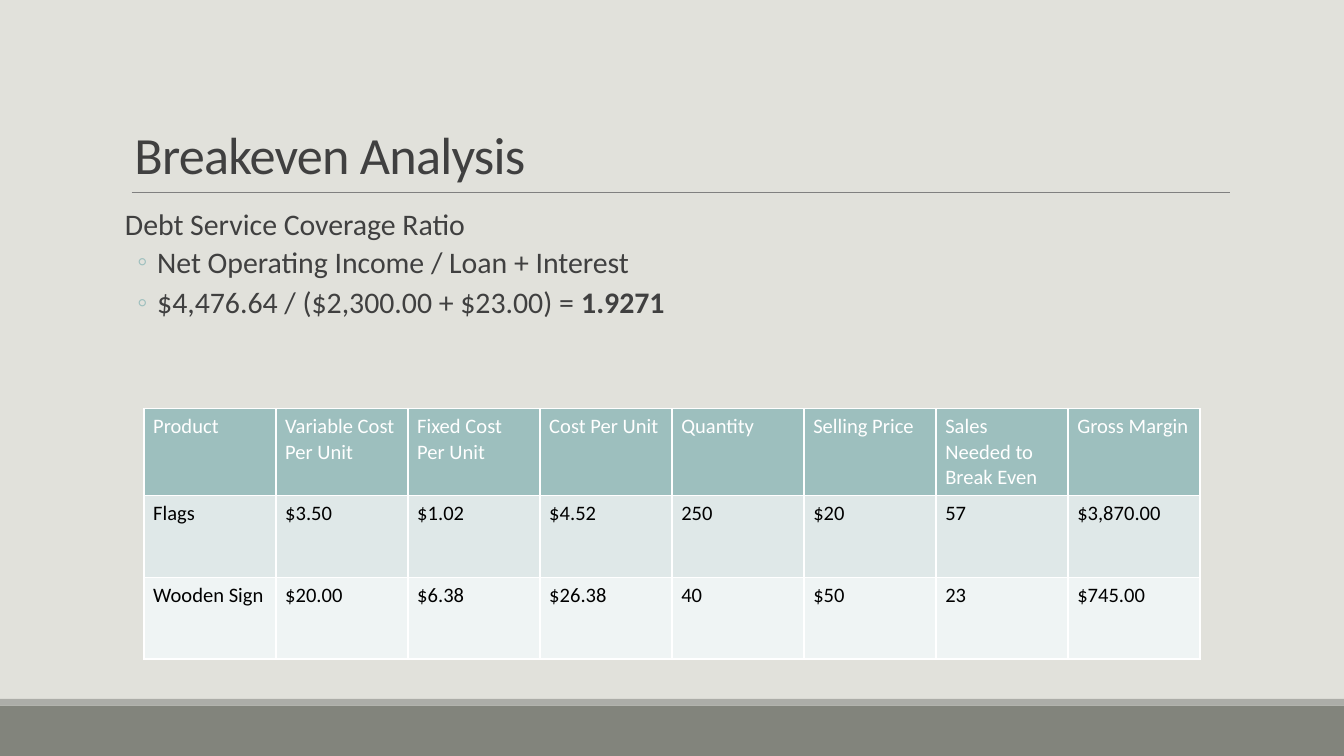
from lxml import etree
from pptx import Presentation
from pptx.dml.color import RGBColor
from pptx.enum.shapes import MSO_CONNECTOR, MSO_SHAPE
from pptx.enum.text import MSO_ANCHOR, MSO_AUTO_SIZE, PP_ALIGN
from pptx.oxml.ns import qn
from pptx.util import Inches, Pt

RECTANGLE = MSO_SHAPE.RECTANGLE
STRAIGHT = MSO_CONNECTOR.STRAIGHT
LEFT = PP_ALIGN.LEFT
TOP, BOTTOM = MSO_ANCHOR.TOP, MSO_ANCHOR.BOTTOM
NO_AUTOFIT = MSO_AUTO_SIZE.NONE

FONT = "Calibri"
COLORS = {
    "background": "E1E1DB", "footer": "82847C", "footer_edge": "ACADA8",
    "rule": "808080", "text": "404040", "accent": "9DBFBE",
    "white": "FFFFFF", "black": "000000",
    "odd_row": "DFE8E8", "even_row": "EFF4F4",
}

TITLE = "Breakeven Analysis"
# Level, then runs as (text, bold)
BODY = [
    (0, [("Debt Service Coverage Ratio", False)]),
    (1, [("Net Operating Income / Loan + Interest", False)]),
    (1, [("$4,476.64 / ($2,300.00 + $23.00) = ", False), ("1.9271", True)]),
]
# Per level: bullet, left margin and hanging indent in inches, space before and after in points
LEVELS = [(" ", 0.07, -0.07, 9, 1.5), ("◦", 0.31, -0.15, 1.5, 3)]
PRODUCTS = [
    ["Product", "Variable Cost Per Unit", "Fixed Cost Per Unit", "Cost Per Unit",
     "Quantity", "Selling Price", "Sales Needed to Break Even", "Gross Margin"],
    ["Flags", "$3.50", "$1.02", "$4.52", "250", "$20", "57", "$3,870.00"],
    ["Wooden Sign", "$20.00", "$6.38", "$26.38", "40", "$50", "23", "$745.00"],
]
# Per table row: fill, text colour
ROW_STYLES = [("accent", "white"), ("odd_row", "black"), ("even_row", "black")]
BANDS = [("footer", 5.25, 0.38), ("footer_edge", 5.2, 0.05)]


def color(name):
    return RGBColor.from_string(COLORS[name])


def add_run(paragraph, text, size, color_name, bold=False):
    run = paragraph.add_run()
    run.text = text
    run.font.name = FONT
    run.font.size = Pt(size)
    run.font.bold = bold
    run.font.color.rgb = color(color_name)
    return run


def place(shape, left, top, width, height):
    shape.left, shape.top = Inches(left), Inches(top)
    shape.width, shape.height = Inches(width), Inches(height)


def add_color_xml(parent, name):
    etree.SubElement(parent, qn("a:srgbClr"), val=COLORS[name])


def add_bands(slide):
    for name, top, height in BANDS:
        band = slide.shapes.add_shape(
            RECTANGLE, 0, Inches(top), Inches(10), Inches(height))
        band.shadow.inherit = False
        band.fill.solid()
        band.fill.fore_color.rgb = color(name)
        band.line.fill.background()


def add_title_rule(slide):
    rule = slide.shapes.add_connector(
        STRAIGHT, Inches(0.98), Inches(1.43), Inches(9.15), Inches(1.43))
    rule.line.color.rgb = color("rule")
    rule.line.width = Pt(0.5)
    etree.SubElement(rule._element.spPr, qn("a:effectLst"))


def fill_title(title):
    place(title, 0.9, 0.24, 8.25, 1.19)
    frame = title.text_frame
    frame.auto_size = NO_AUTOFIT
    frame.vertical_anchor = BOTTOM
    paragraph = frame.paragraphs[0]
    paragraph.alignment = LEFT
    paragraph.line_spacing = 0.85
    run = add_run(paragraph, TITLE, 28, "text")
    run.font._element.set("spc", "-40")


def fill_body(body):
    place(body, 0.86, 1.51, 8.25, 3.3)
    frame = body.text_frame
    frame.auto_size = NO_AUTOFIT
    frame.vertical_anchor = TOP
    frame.margin_left = frame.margin_right = 0
    for index, (level, runs) in enumerate(BODY):
        paragraph = frame.add_paragraph() if index else frame.paragraphs[0]
        bullet, margin, indent, before, after = LEVELS[level]
        paragraph.level = level
        paragraph.line_spacing = 0.9
        paragraph.space_before, paragraph.space_after = Pt(before), Pt(after)
        properties = paragraph._p.get_or_add_pPr()
        properties.set("marL", str(Inches(margin)))
        properties.set("indent", str(Inches(indent)))
        add_color_xml(etree.SubElement(properties, qn("a:buClr")), "accent")
        etree.SubElement(properties, qn("a:buChar"), char=bullet)
        for text, bold in runs:
            add_run(paragraph, text, 16, "text", bold)


def style_cell(cell, fill_name):
    cell.margin_left, cell.margin_right = Inches(0.07), Inches(0.08)
    cell.margin_top = cell.margin_bottom = Inches(0.04)
    properties = cell._tc.get_or_add_tcPr()
    for side in ("lnL", "lnR", "lnT", "lnB"):
        border = etree.SubElement(properties, qn(f"a:{side}"), w=str(Pt(1)))
        add_color_xml(etree.SubElement(border, qn("a:solidFill")), "white")
    cell.fill.solid()
    cell.fill.fore_color.rgb = color(fill_name)


def add_product_table(slide):
    table = slide.shapes.add_table(
        len(PRODUCTS), len(PRODUCTS[0]),
        Inches(1.07), Inches(3.04), Inches(7.86), Inches(1.83)).table
    for row_index, (values, style) in enumerate(zip(PRODUCTS, ROW_STYLES)):
        fill_name, text_name = style
        for column_index, value in enumerate(values):
            cell = table.cell(row_index, column_index)
            style_cell(cell, fill_name)
            add_run(cell.text_frame.paragraphs[0], value, 11, text_name)


def main():
    presentation = Presentation()
    presentation.slide_width = Inches(10)
    presentation.slide_height = presentation.slide_width * 9 // 16
    slide = presentation.slides.add_slide(presentation.slide_layouts[1])
    slide.background.fill.solid()
    slide.background.fill.fore_color.rgb = color("background")
    add_bands(slide)
    add_title_rule(slide)
    fill_title(slide.shapes.title)
    fill_body(slide.placeholders[1])
    add_product_table(slide)
    presentation.save("out.pptx")


if __name__ == "__main__":
    main()
